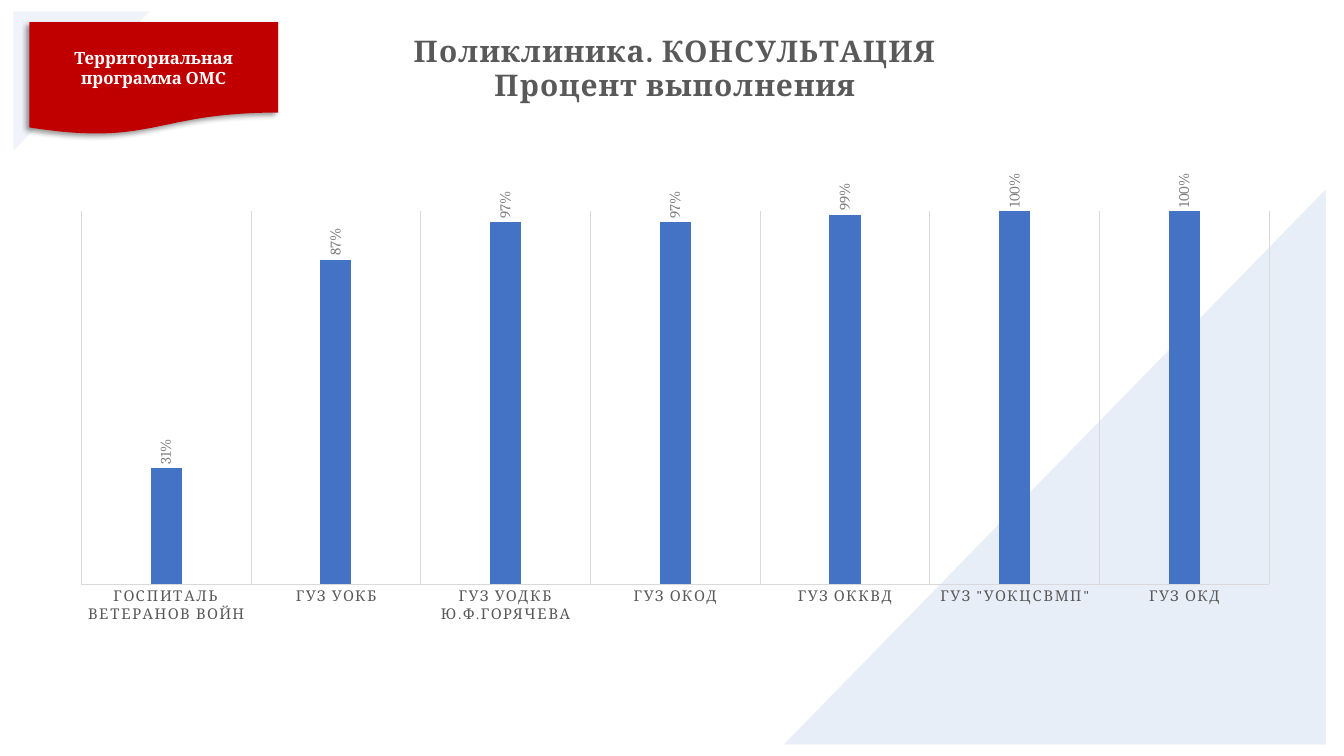
"""Build the slide on outpatient consultation plan completion."""
from dataclasses import dataclass

from lxml import etree
from pptx import Presentation
from pptx.chart.data import CategoryChartData
from pptx.dml.color import RGBColor
from pptx.enum.chart import XL_CHART_TYPE, XL_LABEL_POSITION, XL_TICK_MARK
from pptx.enum.shapes import MSO_SHAPE
from pptx.enum.text import MSO_ANCHOR, PP_ALIGN
from pptx.oxml import parse_xml
from pptx.oxml.ns import nsdecls, qn
from pptx.util import Cm, Pt

TRIANGLE = MSO_SHAPE.RIGHT_TRIANGLE
DOCUMENT = MSO_SHAPE.FLOWCHART_DOCUMENT
COLUMNS = XL_CHART_TYPE.COLUMN_CLUSTERED
OUTSIDE = XL_LABEL_POSITION.OUTSIDE_END
NO_TICK = XL_TICK_MARK.NONE
MIDDLE = MSO_ANCHOR.MIDDLE
CENTER = PP_ALIGN.CENTER
FONT = "Cambria"
GRAY = "595959"
GRID = "D9D9D9"
PERCENT = "0%"

COMPLETION = {
    "ГОСПИТАЛЬ ВЕТЕРАНОВ ВОЙН": 0.31,
    "ГУЗ УОКБ": 0.87,
    "ГУЗ УОДКБ Ю.Ф.ГОРЯЧЕВА": 0.97,
    "ГУЗ ОКОД": 0.97,
    "ГУЗ ОККВД": 0.99,
    'ГУЗ "УОКЦСВМП"': 1,
    "ГУЗ ОКД": 1,
}


@dataclass
class Corner:
    left: float
    top: float
    width: float
    height: float
    rotation: int
    color: str
    outlined: bool


CORNERS = [
    Corner(19.58, 4.93, 14.0, 13.67, 270, "8FAADC", True),
    Corner(0.3, 0.33, 3.51, 3.43, 90, "B4C7E7", False),
]


def rgb(color: str) -> RGBColor:
    return RGBColor.from_string(color)


def style_font(font, size: float, color: str, bold: bool = False) -> None:
    font.name = FONT
    font.size = Pt(size)
    font.bold = bold
    font.color.rgb = rgb(color)


def write_text(frame, text: str, *, size: float, color: str, spacing: int = 0) -> None:
    frame.text = text
    for para in frame.paragraphs:
        para.alignment = CENTER
        for span in para.runs:
            style_font(span.font, size, color, bold=True)
            if spacing:
                span.font._element.set("spc", str(spacing))


def add_corner(page, corner: Corner) -> None:
    shape = page.shapes.add_shape(
        TRIANGLE, Cm(corner.left), Cm(corner.top), Cm(corner.width), Cm(corner.height))
    shape.rotation = corner.rotation
    shape.shadow.inherit = False
    shape.fill.solid()
    shape.fill.fore_color.rgb = rgb(corner.color)
    if corner.outlined:
        shape.line.color.rgb = rgb("FFFFFF")
        shape.line.width = Pt(1)
    else:
        shape.line.fill.background()
    for color in shape.element.xpath("./p:spPr//a:srgbClr"):
        etree.SubElement(color, qn("a:alpha")).set("val", "20000")


def place_plot(chart, **fractions: float) -> None:
    area = chart.element.xpath("//c:plotArea")[0]
    for old in area.findall(qn("c:layout")):
        area.remove(old)
    places = "".join(f'<c:{name} val="{value}"/>' for name, value in fractions.items())
    area.insert(0, parse_xml(
        f'<c:layout {nsdecls("c")}><c:manualLayout><c:layoutTarget val="inner"/>'
        f'<c:xMode val="edge"/><c:yMode val="edge"/>{places}'
        '</c:manualLayout></c:layout>'))


def add_completion_chart(page) -> None:
    data = CategoryChartData(number_format=PERCENT)
    data.categories = list(COMPLETION)
    data.add_series("Процент выполнения", list(COMPLETION.values()))
    chart = page.shapes.add_chart(
        COLUMNS, Cm(1.65), Cm(0.28), Cm(30.71), Cm(18.54), data).chart
    style_font(chart.font, 10, "000000")
    chart.has_legend = False
    chart.has_title = True
    write_text(chart.chart_title.text_frame,
               "Поликлиника. КОНСУЛЬТАЦИЯ\nПроцент выполнения",
               size=21.3, color=GRAY, spacing=100)

    names = chart.category_axis
    names.major_tick_mark = NO_TICK
    names.has_major_gridlines = True
    for line in (names.format.line, names.major_gridlines.format.line):
        line.color.rgb = rgb(GRID)
        line.width = Pt(0.75)
    style_font(names.tick_labels.font, 10.6, GRAY)
    chart.element.xpath("//c:catAx/c:txPr//a:defRPr")[0].set("spc", "120")

    scale = chart.value_axis
    scale.minimum_scale, scale.maximum_scale, scale.major_unit = 0, 1, 1
    scale.has_major_gridlines = False
    scale.visible = False

    plot = chart.plots[0]
    plot.gap_width, plot.overlap, plot.vary_by_categories = 444, -90, False
    series = plot.series[0]
    series.format.fill.solid()
    series.format.fill.fore_color.rgb = rgb("4472C4")
    labels = series.data_labels
    labels.show_value = True
    labels.position = OUTSIDE
    labels.number_format = PERCENT
    labels.number_format_is_linked = False
    style_font(labels.font, 10.6, "808080")
    turned = chart.element.xpath("//c:ser/c:dLbls/c:txPr/a:bodyPr")[0]
    turned.set("rot", "-5400000")
    turned.set("vert", "horz")
    place_plot(chart, x=0.013, y=0.272, w=0.975, h=0.507)


def add_program_flag(page) -> None:
    flag = page.shapes.add_shape(DOCUMENT, Cm(0.74), Cm(0.56), Cm(6.27), Cm(2.84))
    flag.fill.solid()
    flag.fill.fore_color.rgb = rgb("C00000")
    flag.line.fill.background()
    flag.shadow.inherit = False
    effects = flag.element.xpath("./p:spPr/a:effectLst")[0]
    effects.append(parse_xml(
        f'<a:outerShdw {nsdecls("a")} blurRad="{Pt(4)}" dist="{Pt(3)}" dir="8100000" '
        'algn="tr" rotWithShape="0"><a:srgbClr val="000000"><a:alpha val="40000"/>'
        '</a:srgbClr></a:outerShdw>'))
    frame = flag.text_frame
    frame.word_wrap = True
    frame.vertical_anchor = MIDDLE
    frame.margin_left = frame.margin_right = Cm(0.18)
    frame.margin_top = frame.margin_bottom = Cm(0.08)
    write_text(frame, "Территориальная программа ОМС", size=12, color="FFFFFF")


def main() -> None:
    deck = Presentation()
    deck.slide_width, deck.slide_height = Cm(33.87), Cm(19.05)
    page = deck.slides.add_slide(deck.slide_layouts[6])
    for corner in CORNERS:
        add_corner(page, corner)
    add_completion_chart(page)
    add_program_flag(page)
    deck.save("out.pptx")


if __name__ == "__main__":
    main()
